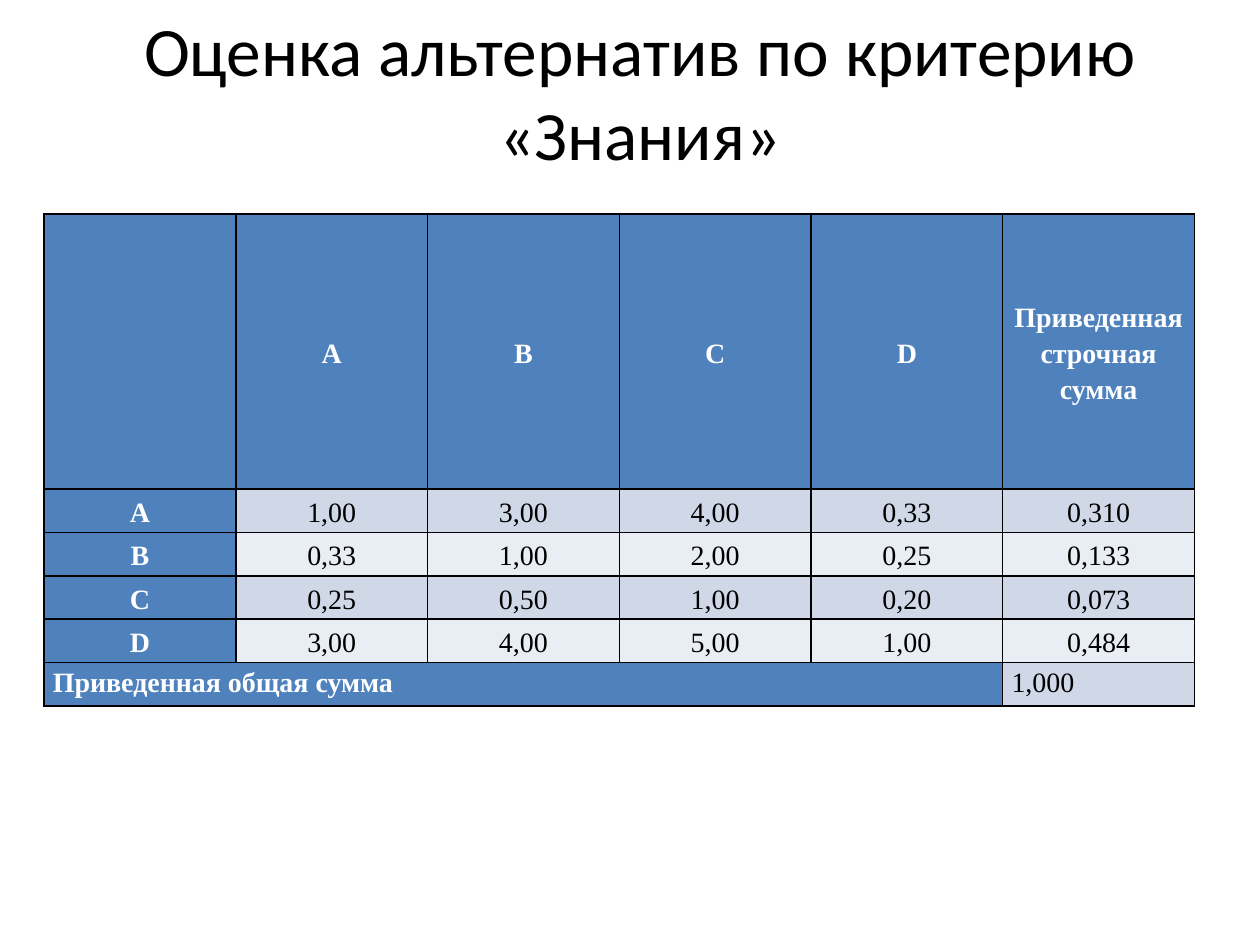
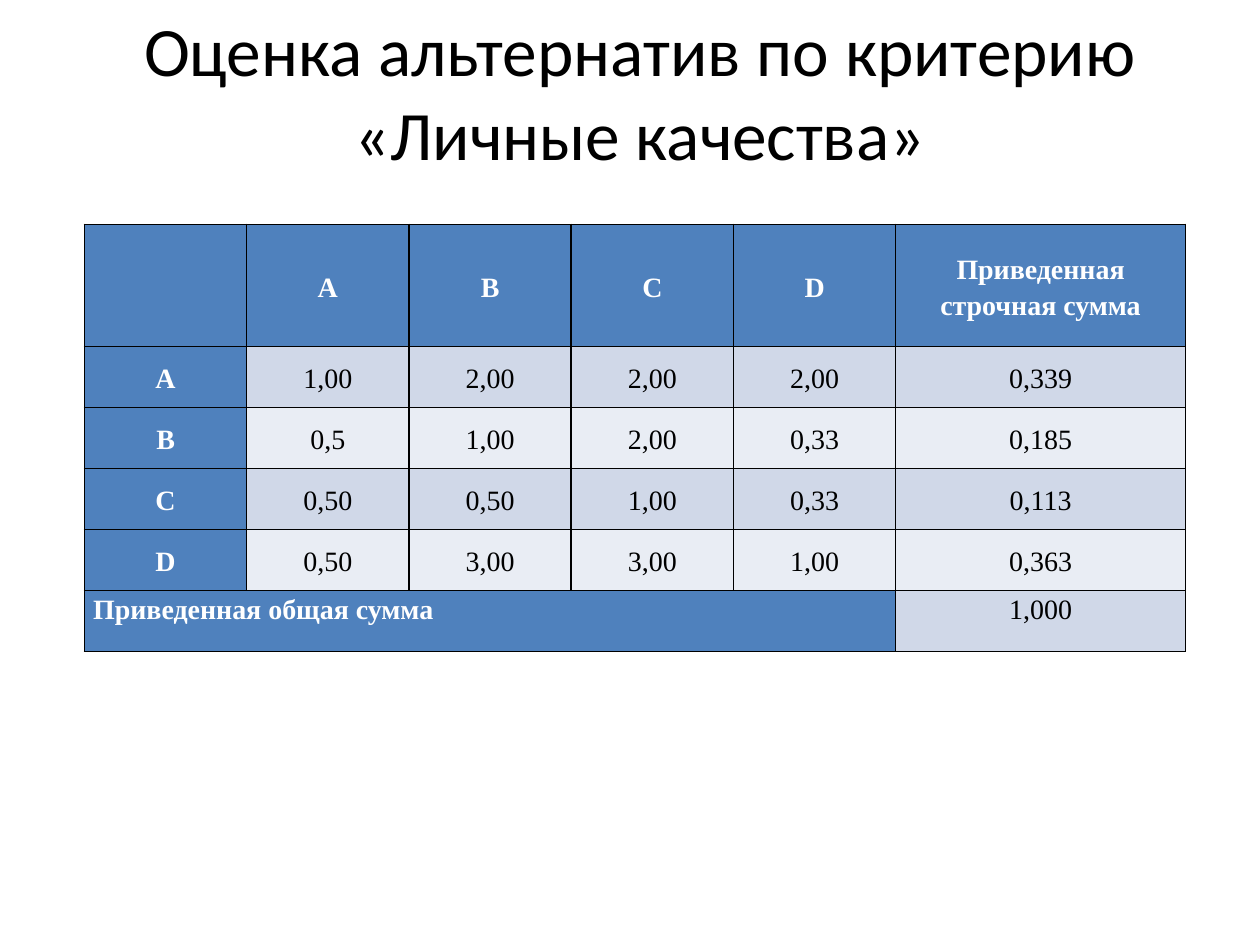
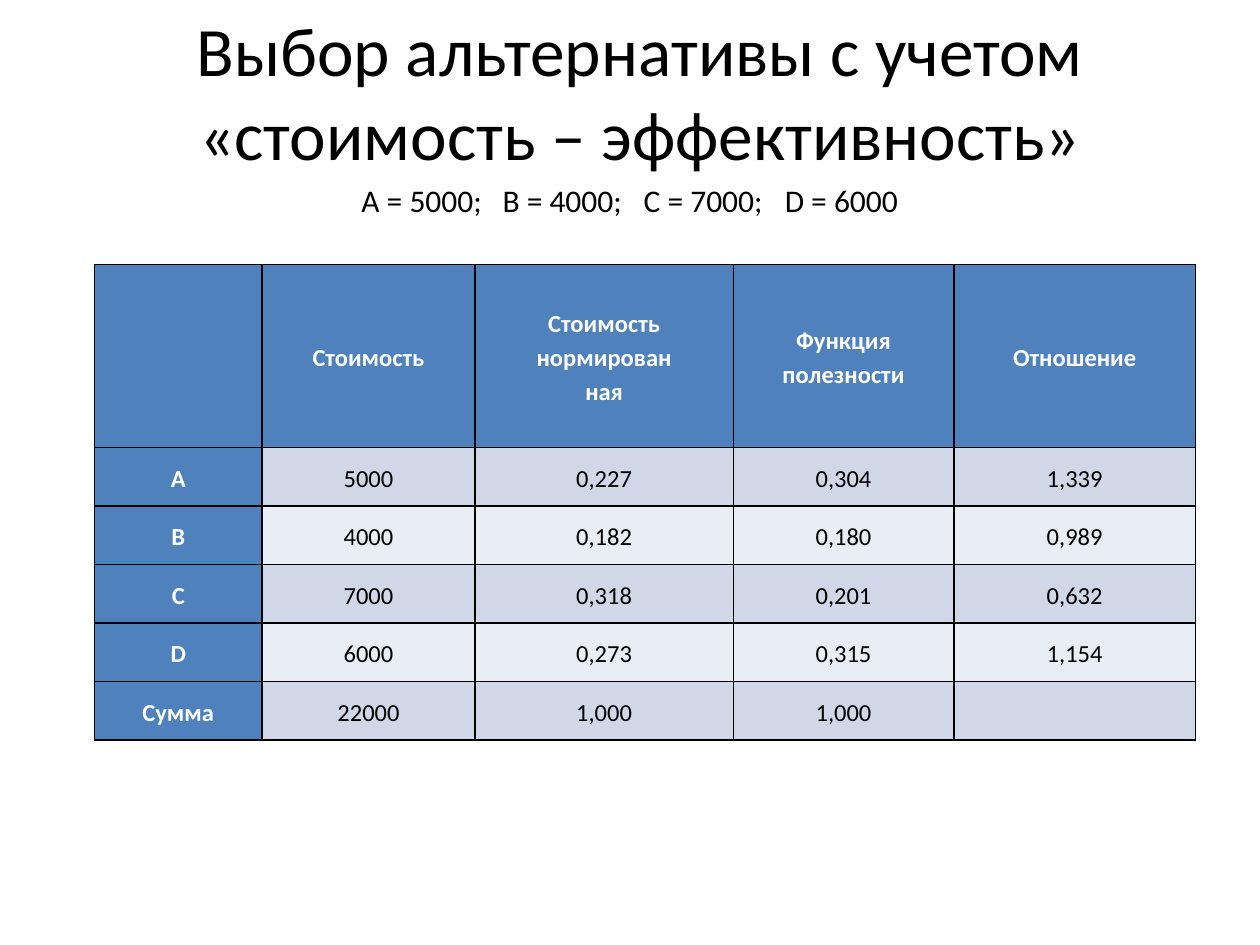
from dataclasses import dataclass

from lxml.etree import SubElement
from pptx import Presentation
from pptx.dml.color import RGBColor
from pptx.enum.text import MSO_ANCHOR, PP_ALIGN
from pptx.oxml.ns import qn
from pptx.util import Inches, Pt


@dataclass(frozen=True)
class Theme:
    header: str = "4F81BD"
    bands: tuple = ("D0D8E8", "E9EDF4")
    ink: str = "000000"
    header_ink: str = "FFFFFF"
    body_font: str = "Calibri"
    matrix_font: str = "Times New Roman"
    title_size: float = 39.6
    subtitle_size: float = 18
    matrix_size: float = 16
    summary_size: float = 14
    line_spacing: float = 1.15
    border_width: float = 1


COLUMNS, ROWS = 100, 75
ALTERNATIVES = ["A", "B", "C", "D"]
MATRIX_HEADER = ["", *ALTERNATIVES, "Приведенная\nстрочная сумма"]


class Deck:
    """Holds the theme and the current slide; lengths are grid units of 100 x 75."""

    def __init__(self, theme):
        self.theme = theme
        self.file = Presentation()
        self.file.slide_width, self.file.slide_height = Inches(10), Inches(7.5)
        self.slide = None

    def x(self, columns):
        return round(self.file.slide_width * columns / COLUMNS)

    def y(self, rows):
        return round(self.file.slide_height * rows / ROWS)

    def add_slide(self, title):
        self.slide = self.file.slides.add_slide(self.file.slide_layouts[6])
        self.text(title, (8.3, 1.3, 85, 11.8), self.theme.title_size,
                  PP_ALIGN.CENTER, MSO_ANCHOR.MIDDLE)

    def add_run(self, paragraph, text, font, size, color, bold=False):
        run = paragraph.add_run()
        run.text = text
        run.font.name, run.font.size, run.font.bold = font, Pt(size), bold
        run.font.color.rgb = RGBColor.from_string(color)

    def text(self, text, at, size, align=PP_ALIGN.LEFT, anchor=MSO_ANCHOR.TOP):
        left, top, width, height = at
        box = self.slide.shapes.add_textbox(
            self.x(left), self.y(top), self.x(width), self.y(height))
        frame = box.text_frame
        frame.word_wrap = True
        frame.vertical_anchor = anchor
        paragraph = frame.paragraphs[0]
        paragraph.alignment = align
        self.add_run(paragraph, text, self.theme.body_font, size, self.theme.ink)
        return paragraph

    def tabbed_text(self, entries, at, size, step):
        """Sets the entries on one line, each a fixed step after the last."""
        paragraph = self.text("\t".join(entries), at, size)
        stops = SubElement(paragraph._p.get_or_add_pPr(), qn("a:tabLst"))
        for index in range(1, len(entries)):
            SubElement(stops, qn("a:tab"), pos=str(self.x(step * index)), algn="l")

    def border(self, cell):
        properties = cell._tc.get_or_add_tcPr()
        for side in ("lnL", "lnR", "lnT", "lnB"):
            line = SubElement(properties, qn(f"a:{side}"),
                              w=str(Pt(self.theme.border_width)))
            fill = SubElement(line, qn("a:solidFill"))
            SubElement(fill, qn("a:srgbClr"), val=self.theme.ink)

    def fill_cell(self, cell, text, row, is_header, font, size):
        theme = self.theme
        self.border(cell)
        cell.fill.solid()
        cell.fill.fore_color.rgb = RGBColor.from_string(
            theme.header if is_header else theme.bands[(row - 1) % 2])
        cell.margin_left = cell.margin_right = Inches(0.07)
        cell.margin_top = cell.margin_bottom = 0
        cell.vertical_anchor = MSO_ANCHOR.MIDDLE
        for index, line in enumerate(text.split("\n") if text else []):
            frame = cell.text_frame
            paragraph = frame.add_paragraph() if index else frame.paragraphs[0]
            paragraph.alignment = PP_ALIGN.CENTER
            paragraph.line_spacing = theme.line_spacing
            self.add_run(paragraph, line, font, size,
                         theme.header_ink if is_header else theme.ink, is_header)

    def table(self, values, at, widths, header_height, row_height, font, size):
        left, top = at
        heights = [header_height] + [row_height] * (len(values) - 1)
        frame = self.slide.shapes.add_table(
            len(heights), len(widths), self.x(left), self.y(top),
            self.x(sum(widths)), self.y(sum(heights)))
        table = frame.table
        table.first_row = table.horz_banding = False
        for column, width in zip(table.columns, widths):
            column.width = self.x(width)
        for row, height in zip(table.rows, heights):
            row.height = self.y(height)
        for row, texts in enumerate(values):
            for column, text in enumerate(texts):
                self.fill_cell(table.cell(row, column), text, row,
                               row == 0 or column == 0, font, size)
        return table

    def criterion_table(self, scores, at, widths, header_height, row_height,
                        total_align):
        """Draws a pairwise comparison with a merged total row below it."""
        body = [[name, *row.split()] for name, row in zip(ALTERNATIVES, scores)]
        total = ["Приведенная общая сумма", "", "", "", "", "1,000"]
        table = self.table([MATRIX_HEADER, *body, total], at, widths,
                           header_height, row_height,
                           self.theme.matrix_font, self.theme.matrix_size)
        last = len(body) + 1
        label, total_sum = table.cell(last, 0), table.cell(last, 5)
        label.merge(table.cell(last, 4))
        for cell, align in ((label, PP_ALIGN.LEFT), (total_sum, total_align)):
            cell.vertical_anchor = MSO_ANCHOR.TOP
            cell.text_frame.paragraphs[0].alignment = align


def main():
    theme = Theme()
    deck = Deck(theme)

    deck.add_slide("Оценка альтернатив по критерию «Знания»")
    knowledge = ["1,00 3,00 4,00 0,33 0,310",
                 "0,33 1,00 2,00 0,25 0,133",
                 "0,25 0,50 1,00 0,20 0,073",
                 "3,00 4,00 5,00 1,00 0,484"]
    deck.criterion_table(knowledge, (3.5, 17), [15.22] * 6, 21.8, 3.45,
                         PP_ALIGN.LEFT)

    deck.add_slide("Оценка альтернатив по критерию «Личные качества»")
    personal_qualities = ["1,00 2,00 2,00 2,00 0,339",
                          "0,5 1,00 2,00 0,33 0,185",
                          "0,50 0,50 1,00 0,33 0,113",
                          "0,50 3,00 3,00 1,00 0,363"]
    deck.criterion_table(personal_qualities, (6.7, 17.8), [12.88] * 5 + [23],
                         9.7, 4.84, PP_ALIGN.CENTER)

    deck.add_slide("Выбор альтернативы с учетом «стоимость – эффективность»")
    costs = ["А = 5000;", "В = 4000;", "С = 7000;", "D = 6000"]
    deck.tabbed_text(costs, (27.7, 13.9, 45.2, 4), theme.subtitle_size, 11.2)
    cost_effectiveness = [
        ["", "Стоимость", "Стоимость нормирован\nная", "Функция полезности",
         "Отношение"],
        ["A", "5000", "0,227", "0,304", "1,339"],
        ["B", "4000", "0,182", "0,180", "0,989"],
        ["C", "7000", "0,318", "0,201", "0,632"],
        ["D", "6000", "0,273", "0,315", "1,154"],
        ["Сумма", "22000", "1,000", "1,000", ""],
    ]
    deck.table(cost_effectiveness, (7.5, 21), [13.3, 16.9, 20.5, 17.5, 19.2],
               14.5, 4.65, theme.body_font, theme.summary_size)

    deck.file.save("out.pptx")


if __name__ == "__main__":
    main()
